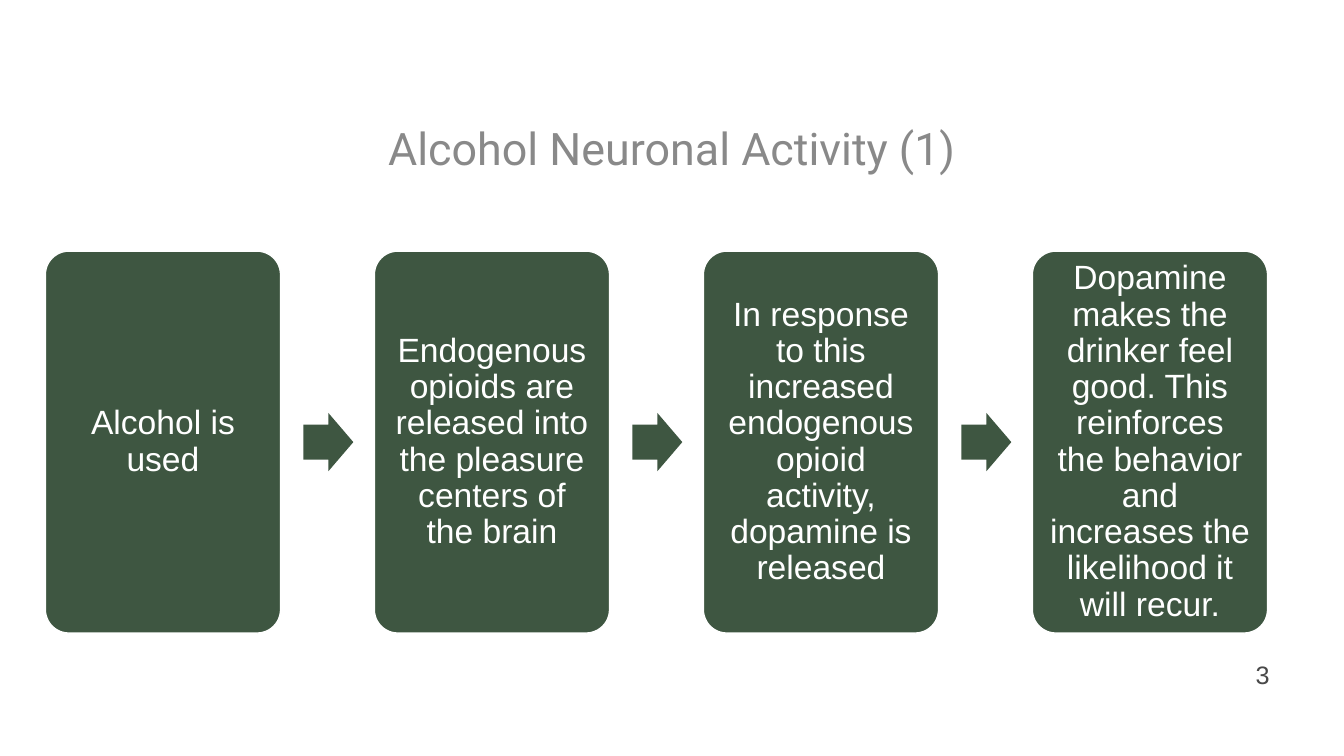
from pptx import Presentation
from pptx.dml.color import RGBColor
from pptx.enum.shapes import MSO_SHAPE
from pptx.enum.text import MSO_ANCHOR, MSO_AUTO_SIZE, PP_ALIGN
from pptx.util import Pt

CARD, ARROW = MSO_SHAPE.ROUNDED_RECTANGLE, MSO_SHAPE.RIGHT_ARROW
MIDDLE, CENTER, NO_FIT = MSO_ANCHOR.MIDDLE, PP_ALIGN.CENTER, MSO_AUTO_SIZE.NONE

COLORS = {"green": "3E5641", "white": "FFFFFF", "title": "898989", "number": "494949"}
FRAME = {"word_wrap": True, "auto_size": NO_FIT, "vertical_anchor": MIDDLE,
         "margin_left": Pt(7.2), "margin_right": Pt(7.2)}

STEPS = [
    "Alcohol is used",
    "Endogenous opioids are released into the pleasure centers of the brain",
    "In response to this increased endogenous opioid activity, dopamine is released",
    "Dopamine makes the drinker feel good. This reinforces the behavior and "
    "increases the likelihood it will recur.",
]
LEFT, TOP, WIDTH, HEIGHT, PITCH = 32.4, 179.4, 168, 272.8, 235
ARROW_OFFSET, ARROW_WIDTH, ARROW_HEIGHT = 184.4, 35.6, 41.6


def write(sp, text, size, color, font="Arial", spacing=0.9):
    tf = sp.text_frame
    for name, value in FRAME.items():
        setattr(tf, name, value)
    p = tf.paragraphs[0]
    p.alignment = CENTER
    p.line_spacing = spacing
    r = p.add_run()
    r.text = text
    r.font.name = font
    r.font.size = Pt(size)
    r.font.color.rgb = RGBColor.from_string(COLORS[color])


def add_green_shape(kind, x, y, w, h):
    sp = s.shapes.add_shape(kind, Pt(x), Pt(y), Pt(w), Pt(h))
    sp.shadow.inherit = False
    sp.fill.solid()
    sp.fill.fore_color.rgb = RGBColor.from_string(COLORS["green"])
    sp.line.fill.background()
    return sp


prs = Presentation()
prs.slide_width, prs.slide_height = Pt(960), Pt(540)
s = prs.slides.add_slide(prs.slide_layouts[5])

title = s.shapes.title
title.left, title.top, title.width, title.height = Pt(72), Pt(72), Pt(816), Pt(72)
write(title, "Alcohol Neuronal Activity (1)", 32, "title", "Roboto")

for i, step in enumerate(STEPS):
    x = LEFT + i * PITCH
    card = add_green_shape(CARD, x, TOP, WIDTH, HEIGHT)
    card.adjustments[0] = 0.1
    card.line.color.rgb = RGBColor.from_string(COLORS["white"])
    card.line.width = Pt(1)
    write(card, step, 24, "white")
    if i < len(STEPS) - 1:
        arrow_top = TOP + (HEIGHT - ARROW_HEIGHT) / 2
        arrow = add_green_shape(ARROW, x + ARROW_OFFSET, arrow_top, ARROW_WIDTH, ARROW_HEIGHT)
        arrow.adjustments[0] = 0.6
        arrow.adjustments[1] = 0.5

number = s.shapes.add_textbox(Pt(882), Pt(467.3), Pt(39.6), Pt(28.8))
write(number, "3", 18, "number", spacing=1.0)

prs.save("out.pptx")
